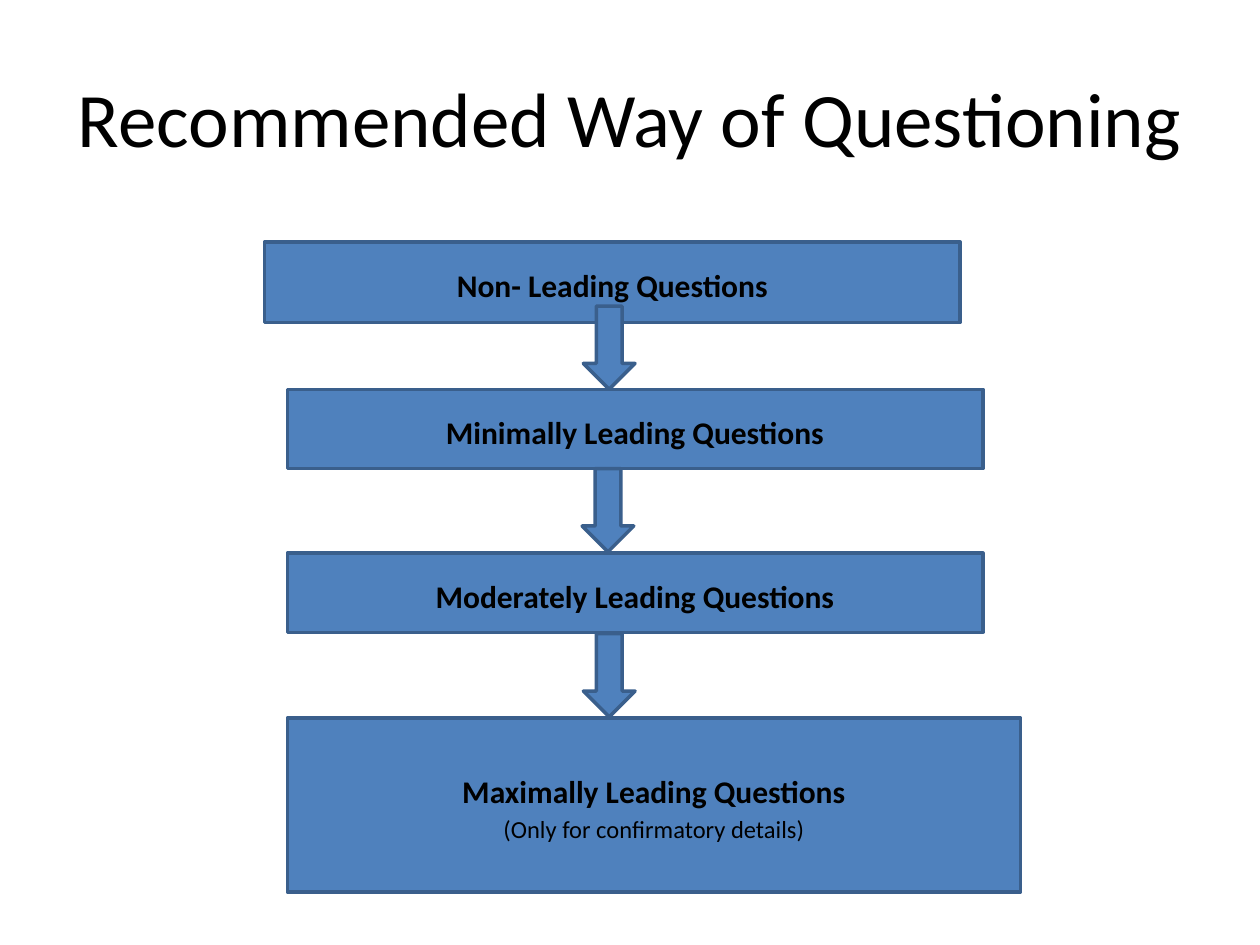
"""Build a slide showing the recommended order of question types."""
from typing import NamedTuple

from pptx import Presentation
from pptx.dml.color import RGBColor
from pptx.enum.shapes import MSO_SHAPE as Kind
from pptx.enum.text import MSO_ANCHOR as Anchor, PP_ALIGN as Align
from pptx.util import Emu, Pt

PX = 9144
FONT = "Calibri"
BLACK = RGBColor(0x00, 0x00, 0x00)
BLUE = RGBColor(0x4F, 0x81, 0xBD)
EDGE = RGBColor(0x3A, 0x5F, 0x8C)


class Area(NamedTuple):
    left: int
    top: int
    width: int
    height: int


class Line(NamedTuple):
    text: str
    size: int = 18
    bold: bool = True
    after: int = 0


class Step(NamedTuple):
    area: Area
    lines: tuple[Line, ...]


TITLE = Line("Recommended Way of Questioning", 44, False)
STEPS = (
    Step(Area(210, 192, 552, 64), (Line("Non- Leading Questions", after=10),)),
    Step(Area(228, 309, 552, 63), (Line("Minimally Leading Questions", after=10),)),
    Step(Area(228, 439, 552, 63), (Line("Moderately Leading Questions", after=10),)),
    Step(Area(228, 570, 582, 138), (
        Line("Maximally Leading Questions"),
        Line("(Only for confirmatory details)", 14, False),
    )),
)
ARROWS = tuple(Area(left, top, 41, 66) for left, top in ((463, 243), (462, 372), (463, 503)))


def scale(area: Area) -> list[Emu]:
    return [Emu(side * PX) for side in area]


def write(shape, lines: tuple[Line, ...], space: float) -> None:
    frame = shape.text_frame
    frame.word_wrap = True
    frame.vertical_anchor = Anchor.MIDDLE
    for i, line in enumerate(lines):
        para = frame.add_paragraph() if i else frame.paragraphs[0]
        para.text = line.text
        para.alignment = Align.CENTER
        para.line_spacing = space
        para.space_after = Pt(line.after)
        font = para.font
        font.name, font.size, font.bold = FONT, Pt(line.size), line.bold
        font.color.rgb = BLACK


def draw(slide, kind: Kind, area: Area):
    shape = slide.shapes.add_shape(kind, *scale(area))
    shape.shadow.inherit = False
    shape.fill.solid()
    shape.fill.fore_color.rgb = BLUE
    shape.line.color.rgb = EDGE
    shape.line.width = Pt(2)
    return shape


def main() -> None:
    deck = Presentation()
    deck.slide_width, deck.slide_height = Emu(1000 * PX), Emu(750 * PX)
    slide = deck.slides.add_slide(deck.slide_layouts[6])
    title = slide.shapes.add_textbox(*scale(Area(50, 30, 900, 125)))
    write(title, (TITLE,), 1.0)
    for step in STEPS:
        write(draw(slide, Kind.RECTANGLE, step.area), step.lines, 1.15)
    for area in ARROWS:
        draw(slide, Kind.DOWN_ARROW, area)
    deck.save("out.pptx")


if __name__ == "__main__":
    main()
